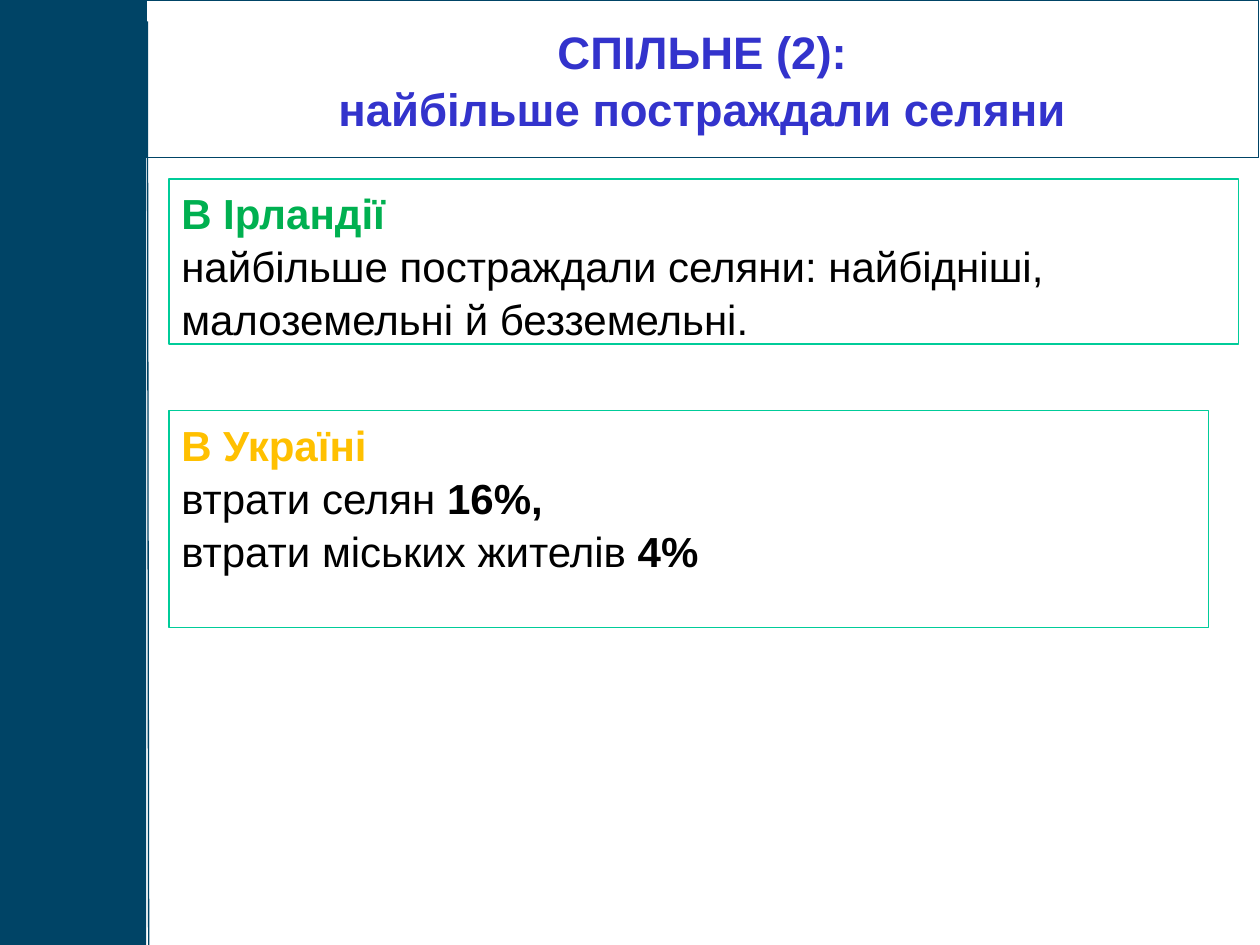
from dataclasses import dataclass

from lxml import etree
from pptx import Presentation
from pptx.dml.color import RGBColor
from pptx.enum.shapes import MSO_CONNECTOR, MSO_SHAPE
from pptx.enum.text import MSO_ANCHOR, MSO_AUTO_SIZE, PP_ALIGN
from pptx.oxml.ns import qn
from pptx.util import Inches, Pt

RECTANGLE = MSO_SHAPE.RECTANGLE
STRAIGHT = MSO_CONNECTOR.STRAIGHT
TOP, MIDDLE = MSO_ANCHOR.TOP, MSO_ANCHOR.MIDDLE
LEFT, CENTER = PP_ALIGN.LEFT, PP_ALIGN.CENTER
FIXED_SIZE = MSO_AUTO_SIZE.NONE
TITLE_ONLY = 5


@dataclass(frozen=True)
class Theme:
    """Colours, type sizes and line settings of the slide."""

    font: str = "Arial"
    title_size: int = 26
    body_size: int = 24
    line_width: float = 0.75
    line_spacing: float = 1.05
    navy: str = "004466"
    white: str = "FFFFFF"
    title: str = "3333CC"
    text: str = "000000"
    frame: str = "00CC99"
    ireland: str = "00B050"
    ukraine: str = "FFC000"


class SlideBuilder:
    """Draws the elements of one slide in a given theme."""

    def __init__(self, slide, theme):
        self.slide = slide
        self.theme = theme

    def outline(self, line, color):
        line.color.rgb = RGBColor.from_string(color)
        line.width = Pt(self.theme.line_width)

    def format_run(self, run, size, color, bold):
        run.font.name = self.theme.font
        run.font.size = Pt(size)
        run.font.bold = bold
        run.font.color.rgb = RGBColor.from_string(color)

    def format_paragraph(self, paragraph, align):
        paragraph.alignment = align
        paragraph.line_spacing = self.theme.line_spacing
        paragraph.space_before = Pt(0)

    def title(self, left, top, width, height, text):
        title = self.slide.shapes.title
        title.left, title.top = Inches(left), Inches(top)
        title.width, title.height = Inches(width), Inches(height)
        title.fill.solid()
        title.fill.fore_color.rgb = RGBColor.from_string(self.theme.white)
        self.outline(title.line, self.theme.navy)
        frame = title.text_frame
        frame.text = text
        frame.auto_size = FIXED_SIZE
        frame.vertical_anchor = MIDDLE
        for paragraph in frame.paragraphs:
            self.format_paragraph(paragraph, CENTER)
            for run in paragraph.runs:
                self.format_run(run, self.theme.title_size, self.theme.title, True)

    def rectangle(self, left, top, width, height):
        shape = self.slide.shapes.add_shape(
            RECTANGLE, Inches(left), Inches(top), Inches(width), Inches(height))
        shape.shadow.inherit = False
        return shape

    def band(self, left, top, width, height):
        band = self.rectangle(left, top, width, height)
        band.fill.solid()
        band.fill.fore_color.rgb = RGBColor.from_string(self.theme.navy)
        band.line.fill.background()

    def rule(self, x1, y1, x2, y2):
        rule = self.slide.shapes.add_connector(
            STRAIGHT, Inches(x1), Inches(y1), Inches(x2), Inches(y2))
        self.outline(rule.line, self.theme.navy)
        etree.SubElement(rule._element.spPr, qn("a:effectLst"))

    def panel(self, left, top, width, height, heading, color, statements):
        panel = self.rectangle(left, top, width, height)
        panel.fill.background()
        self.outline(panel.line, self.theme.frame)
        frame = panel.text_frame
        frame.word_wrap = True
        frame.auto_size = FIXED_SIZE
        frame.vertical_anchor = TOP
        size = self.theme.body_size
        frame.text = heading
        self.format_run(frame.paragraphs[0].runs[0], size, color, True)
        for statement, figure in statements:
            paragraph = frame.add_paragraph()
            paragraph.text = statement
            self.format_run(paragraph.runs[0], size, self.theme.text, False)
            if figure:
                emphasis = paragraph.add_run()
                emphasis.text = figure
                self.format_run(emphasis, size, self.theme.text, True)
        for paragraph in frame.paragraphs:
            self.format_paragraph(paragraph, LEFT)


def main():
    deck = Presentation()
    deck.slide_width, deck.slide_height = Inches(10), Inches(7.5)
    theme = Theme()
    slide = deck.slides.add_slide(deck.slide_layouts[TITLE_ONLY])
    builder = SlideBuilder(slide, theme)

    builder.band(0, 0, 1.16, 7.5)
    builder.rule(1.15, 0, 1.15, 7.5)
    builder.title(1.16, 0, 8.83, 1.25, "СПІЛЬНЕ (2):\nнайбільше постраждали селяни")
    builder.rule(1.17, 0.17, 1.18, 7.5)
    builder.panel(
        1.34, 1.42, 8.49, 1.31, "В Ірландії", theme.ireland,
        [("найбільше постраждали селяни: найбідніші, "
          "малоземельні й безземельні.", "")])
    builder.panel(
        1.34, 3.26, 8.25, 1.72, "В Україні", theme.ukraine,
        [("втрати селян ", "16%,"), ("втрати міських жителів ", "4%")])

    deck.save("out.pptx")


if __name__ == "__main__":
    main()
